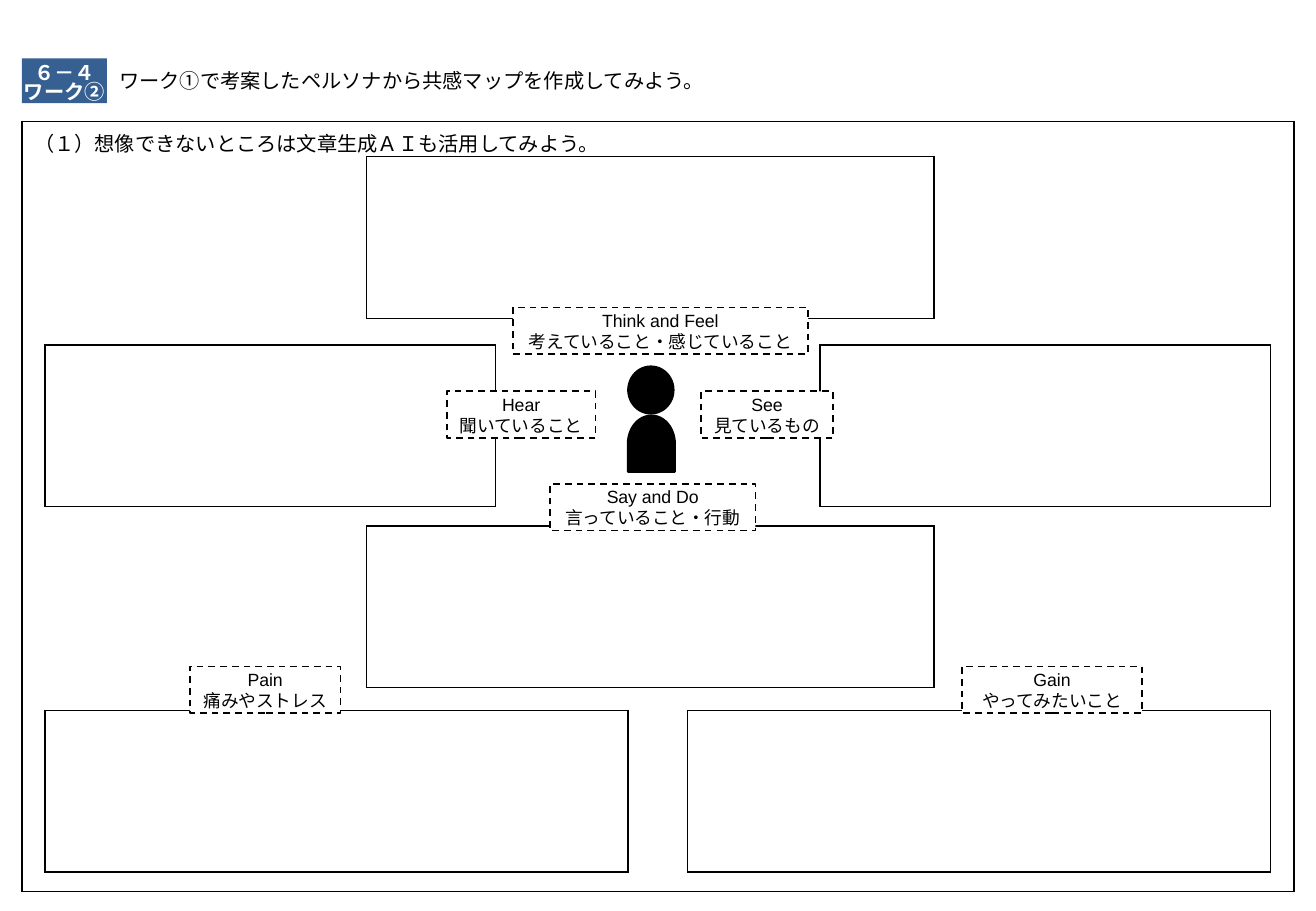
from lxml import etree
from pptx import Presentation
from pptx.dml.color import RGBColor
from pptx.enum import dml, shapes, text
from pptx.oxml import ns
from pptx.util import Pt

BLACK = RGBColor(0, 0, 0)
WHITE = RGBColor(255, 255, 255)
BLUE = RGBColor(0x36, 0x60, 0x92)
JAPANESE = "Noto Sans CJK JP"
LATIN = "Arial"

LEFT, RIGHT = 26.6, 753.2
MIDDLE_LEFT, MIDDLE_WIDTH = 217.4, 336.2
SIDE_WIDTH, BOTTOM_WIDTH = 267.1, 345.6
AREA_HEIGHT, LABEL_HEIGHT = 95.8, 27.6

# left, top, width
AREAS = [
    (MIDDLE_LEFT, 92.9, MIDDLE_WIDTH),
    (LEFT, 204.4, SIDE_WIDTH),
    (RIGHT - SIDE_WIDTH, 204.4, SIDE_WIDTH),
    (MIDDLE_LEFT, 311.8, MIDDLE_WIDTH),
    (LEFT, 421.2, BOTTOM_WIDTH),
    (RIGHT - BOTTOM_WIDTH, 421.2, BOTTOM_WIDTH),
]
# English, Japanese, left, top, width
LABELS = [
    ("Think and Feel", "考えていること・感じていること", 304, 182.3, 175),
    ("Hear", "聞いていること", 264.8, 232, 88.2),
    ("See", "見ているもの", 415.3, 232, 78.6),
    ("Say and Do", "言っていること・行動", 326, 286.9, 121.8),
    ("Pain", "痛みやストレス", 112.5, 395, 89.4),
    ("Gain", "やってみたいこと", 570.3, 395, 106.5),
]


def points(*lengths):
    return [Pt(length) for length in lengths]


def write(frame, words, size=12, font=JAPANESE, color=BLACK, bold=False,
          align=text.PP_ALIGN.LEFT, anchor=text.MSO_ANCHOR.TOP,
          spacing=None, margins=(7.2, 3.6)):
    """Fill a text frame, one paragraph for each line of words."""
    frame.word_wrap = True
    frame.auto_size = text.MSO_AUTO_SIZE.NONE
    frame.vertical_anchor = anchor
    frame.margin_left = frame.margin_right = Pt(margins[0])
    frame.margin_top = frame.margin_bottom = Pt(margins[1])
    for number, line in enumerate(words.split("\n")):
        para = frame.add_paragraph() if number else frame.paragraphs[0]
        para.alignment = align
        para.line_spacing = spacing
        add_span(para, line, size, font, color, bold)


def add_span(para, words, size, font, color, bold=False):
    span = para.add_run()
    span.text = words
    span.font.size = Pt(size)
    span.font.name = font
    span.font.bold = bold
    span.font.color.rgb = color
    east_asian = etree.SubElement(span.font._element, ns.qn("a:ea"))
    east_asian.set("typeface", JAPANESE)


def add_shape(page, kind, place, fill, line=None, width=1, dashed=False):
    shape = page.shapes.add_shape(kind, *points(*place))
    shape.shadow.inherit = False
    shape.fill.solid()
    shape.fill.fore_color.rgb = fill
    if line is None:
        shape.line.fill.background()
    else:
        shape.line.color.rgb = line
        shape.line.width = Pt(width)
    if dashed:
        shape.line.dash_style = dml.MSO_LINE.DASH
    return shape


def add_frame(page, *place):
    """Add a table of one outlined, unfilled cell and return the cell."""
    table = page.shapes.add_table(1, 1, *points(*place)).table
    table.first_row = table.horz_banding = False
    cell = table.cell(0, 0)
    cell.fill.background()
    properties = cell._tc.get_or_add_tcPr()
    for position, side in enumerate(("lnL", "lnR", "lnT", "lnB")):
        border = etree.Element(ns.qn(f"a:{side}"), w=str(Pt(1)))
        fill = etree.SubElement(border, ns.qn("a:solidFill"))
        etree.SubElement(fill, ns.qn("a:srgbClr"), val=str(BLACK))
        properties.insert(position, border)
    return cell


def add_label(page, english, japanese, left, top, width):
    box = add_shape(page, shapes.MSO_SHAPE.RECTANGLE,
                    (left, top, width, LABEL_HEIGHT), WHITE, BLACK, dashed=True)
    write(box.text_frame, f"{english}\n{japanese}", size=10.5, font=LATIN,
          align=text.PP_ALIGN.CENTER, anchor=text.MSO_ANCHOR.MIDDLE)


def add_person(page):
    add_shape(page, shapes.MSO_SHAPE.OVAL, (372.5, 217.4, 26.6, 27.6),
              BLACK, BLACK, width=1.5)
    body = add_shape(page, shapes.MSO_SHAPE.FLOWCHART_DELAY,
                     (369.5, 249.2, 33.2, 27.6), BLACK, BLACK, width=1.5)
    body.rotation = 270


def add_heading(page):
    title = page.shapes.title
    title.left, title.top, title.width, title.height = points(
        63.4, 40.3, 542.2, 16.6)
    write(title.text_frame, "ワーク①で考案したペルソナから共感マップを作成してみよう。",
          anchor=text.MSO_ANCHOR.MIDDLE, spacing=0.9)
    tag = add_shape(page, shapes.MSO_SHAPE.RECTANGLE, (13, 34.6, 50.4, 26.6), BLUE)
    write(tag.text_frame, "６－４\nワーク②", color=WHITE, bold=True,
          align=text.PP_ALIGN.CENTER, anchor=text.MSO_ANCHOR.BOTTOM,
          spacing=Pt(11), margins=(0, 0))


def main():
    deck = Presentation()
    deck.slide_width, deck.slide_height = points(780, 540)
    page = deck.slides.add_slide(deck.slide_layouts[5])
    add_heading(page)
    sheet = add_frame(page, 13, 72, 754, 456.4)
    write(sheet.text_frame, "（１）想像できないところは文章生成ＡＩも活用してみよう。")
    for left, top, width in AREAS:
        add_frame(page, left, top, width, AREA_HEIGHT)
    for label in LABELS:
        add_label(page, *label)
    add_person(page)
    deck.save("out.pptx")


if __name__ == "__main__":
    main()
